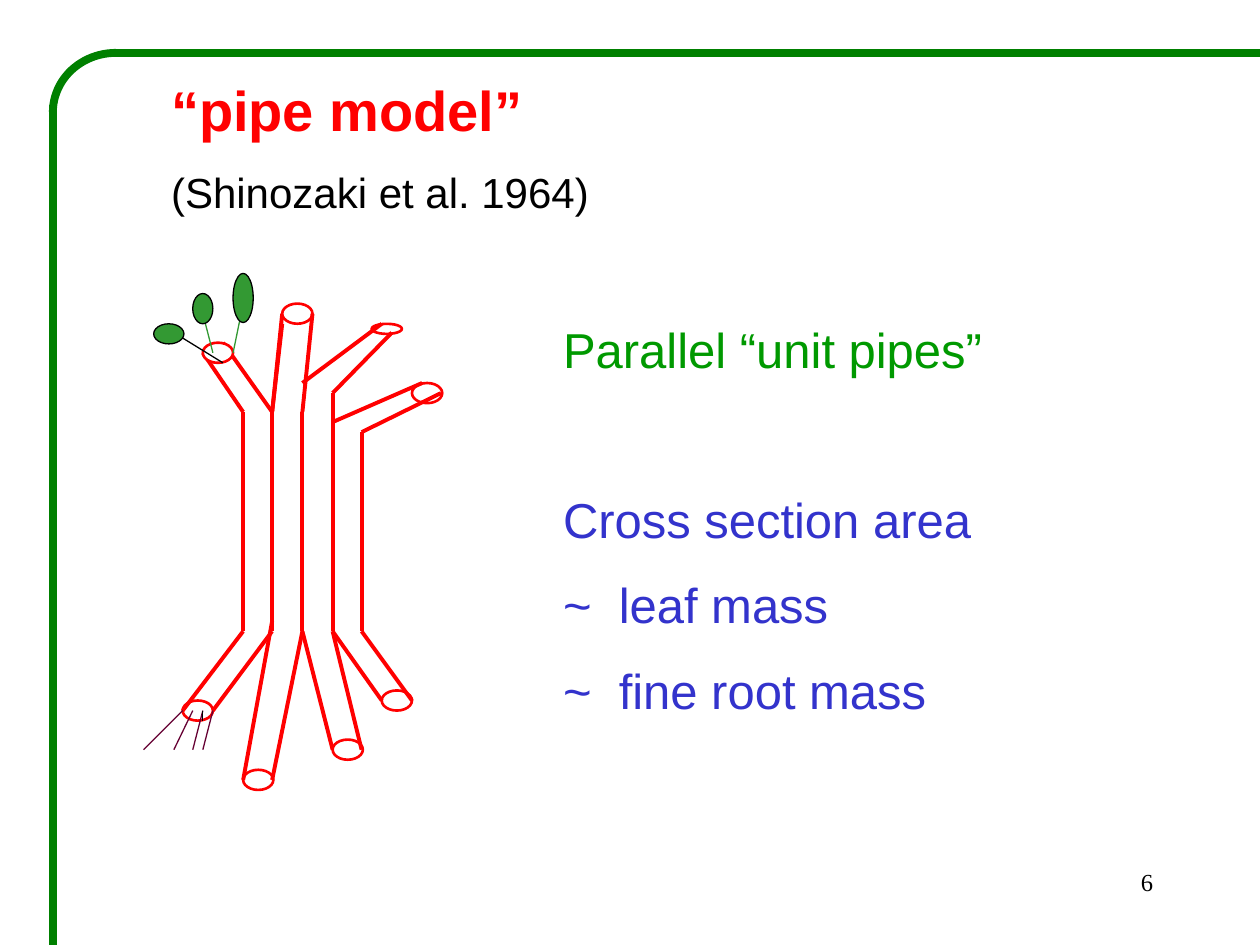
from lxml.etree import SubElement
from pptx import Presentation
from pptx.dml.color import RGBColor
from pptx.enum.shapes import MSO_CONNECTOR as Connector, MSO_SHAPE as Shape
from pptx.enum.text import PP_ALIGN as Align
from pptx.oxml.ns import qn
from pptx.util import Inches, Pt

RED, GREEN, LEAF, ROOT = "FF0000", "008000", "339933", "660033"
BLACK, WHITE, BLUE = "000000", "FFFFFF", "3333CC"
TRUNK_BASE = 5.01

TRUNK_TOPS = [(1.93, 3.27), (2.16, 3.27), (2.4, 3.27), (2.64, 3.12), (2.87, 3.43)]
BRANCHES_BEHIND = [
    (1.61, 2.8, 1.93, 3.27), (1.77, 2.72, 2.16, 3.27),
    (2.16, 3.27, 2.24, 2.49), (2.64, 5.95, 2.4, TRUNK_BASE),
]
PIPE_ENDS = [
    (1.61, 2.72, 0.16), (2.24, 2.41, 0.16), (2.95, 2.57, 0.08),
    (3.27, 3.04, 0.16), (1.45, 5.56, 0.16), (1.93, 6.11, 0.16),
    (2.64, 5.87, 0.16), (3.03, 5.48, 0.16),
]
BRANCHES_IN_FRONT = [
    (2.16, 3.27, 2.24, 2.57), (2.4, 3.27, 2.48, 2.49),
    (2.4, 3.04, 3.03, 2.57), (2.64, 3.12, 3.11, 2.64),
    (2.64, 3.35, 3.35, 3.04), (2.87, 3.43, 3.5, 3.12),
]
ROOT_PIPES = [
    (1.69, 5.64, 2.16), (1.45, 5.64, 1.93), (2.16, 6.19, 2.4),
    (2.87, 5.95, 2.64), (3.27, 5.56, 2.87), (3.03, 5.56, 2.64),
]
FINE_ROOTS = [(1.53, 1.38), (1.61, 1.53), (1.45, 1.14), (1.69, 1.61)]
LEAVES = [
    ((1.69, 2.8, 1.61, 2.49), LEAF, (1.53, 2.33, 0.16, 0.24)),
    ((1.85, 2.8, 1.93, 2.41), LEAF, (1.85, 2.17, 0.16, 0.39)),
    ((1.38, 2.64, 1.77, 2.88), BLACK, (1.22, 2.57, 0.24, 0.16)),
]


def color(value):
    return RGBColor.from_string(value)


def set_line(shape, line_color, width):
    shape.line.color.rgb = color(line_color)
    shape.line.width = Pt(width)


def add_line(slide, points, line_color=RED, width=2.25):
    line = slide.shapes.add_connector(Connector.STRAIGHT, *map(Inches, points))
    set_line(line, line_color, width)
    SubElement(line._element.spPr, qn("a:effectLst"))


def add_ellipse(slide, box, fill=WHITE, line_color=RED, width=1.5):
    ellipse = slide.shapes.add_shape(Shape.OVAL, *map(Inches, box))
    ellipse.shadow.inherit = False
    ellipse.fill.solid()
    ellipse.fill.fore_color.rgb = color(fill)
    set_line(ellipse, line_color, width)


def add_corner(slide, box):
    arc = slide.shapes.add_shape(Shape.ARC, *map(Inches, box))
    arc.shadow.inherit = False
    arc.adjustments[0] = 108
    arc.adjustments[1] = 162
    arc.fill.background()
    set_line(arc, GREEN, 4.5)


def add_text_box(slide, box):
    frame = slide.shapes.add_textbox(*map(Inches, box)).text_frame
    frame.word_wrap = True
    return frame


def add_text(frame, text, size, text_color, font="Arial", bold=False,
             before=0, align=Align.LEFT):
    paragraph = frame.paragraphs[0]
    if paragraph.runs:
        paragraph = frame.add_paragraph()
    paragraph.alignment = align
    paragraph.space_before = Pt(before)
    run = paragraph.add_run()
    run.text = text
    run.font.name = font
    run.font.size = Pt(size)
    run.font.bold = bold
    run.font.color.rgb = color(text_color)


def draw_tree(slide):
    for x, top in TRUNK_TOPS:
        add_line(slide, (x, top, x, TRUNK_BASE))
    for points in BRANCHES_BEHIND:
        add_line(slide, points)
    for left, top, height in PIPE_ENDS:
        add_ellipse(slide, (left, top, 0.24, height))
    for points in BRANCHES_IN_FRONT:
        add_line(slide, points)
    for x, y, trunk_x in ROOT_PIPES:
        add_line(slide, (x, y, trunk_x, TRUNK_BASE))
    add_line(slide, (1.93, 6.19, 2.16, 4.93))
    for start, end in FINE_ROOTS:
        add_line(slide, (start, 5.64, end, 5.95), ROOT, 0.75)
    add_line(slide, (1.61, 5.64, 1.61, 5.72), BLACK, 0.75)
    for stem, stem_color, blade in LEAVES:
        add_line(slide, stem, stem_color, 0.75)
        add_ellipse(slide, blade, LEAF, BLACK, 0.75)


def draw_frame(slide):
    add_line(slide, (10, 0.42, 0.92, 0.42), GREEN, 4.5)
    add_line(slide, (0.42, 0.83, 0.42, 7.5), GREEN, 4.5)
    add_corner(slide, (0.42, 0.42, 1, 0.94))


def main():
    presentation = Presentation()
    presentation.slide_width = Inches(10)
    presentation.slide_height = Inches(7.5)
    slide = presentation.slides.add_slide(presentation.slide_layouts[6])

    draw_frame(slide)
    title = add_text_box(slide, (1.26, 0.55, 5.43, 1.24))
    add_text(title, "“pipe model”", 32, RED, bold=True)
    add_text(title, "(Shinozaki et al. 1964)", 24, BLACK, before=13.5)

    draw_tree(slide)
    notes = add_text_box(slide, (4.37, 2.49, 3.78, 3.4))
    add_text(notes, "Parallel “unit pipes”", 28, "009900")
    add_text(notes, "Cross section area", 28, BLUE, before=63)
    for text in ("~  leaf mass", "~  fine root mass"):
        add_text(notes, text, 28, BLUE, before=15.5)

    number = add_text_box(slide, (7.17, 6.83, 2.08, 0.5))
    add_text(number, "6", 14, BLACK, font="Times New Roman", align=Align.RIGHT)
    presentation.save("out.pptx")


if __name__ == "__main__":
    main()
